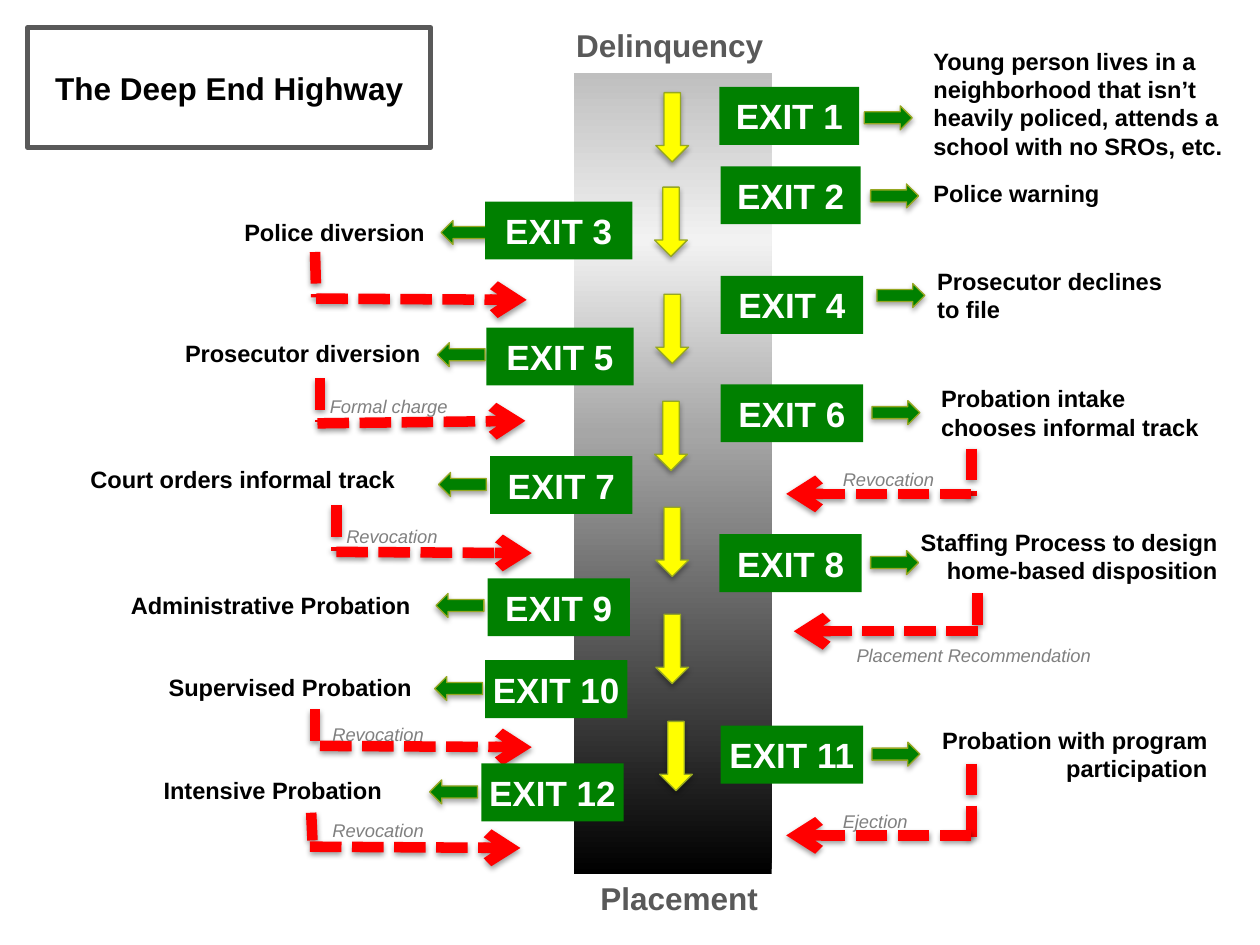
from dataclasses import dataclass
from typing import Optional

from lxml import etree
from pptx import Presentation
from pptx.dml.color import RGBColor
from pptx.enum.dml import MSO_LINE
from pptx.enum.shapes import MSO_CONNECTOR, MSO_SHAPE
from pptx.enum.text import MSO_ANCHOR, MSO_AUTO_SIZE, PP_ALIGN
from pptx.oxml.ns import qn
from pptx.util import Pt

RECT, ARROW = MSO_SHAPE.RECTANGLE, MSO_SHAPE.RIGHT_ARROW
STRAIGHT, DASH = MSO_CONNECTOR.STRAIGHT, MSO_LINE.SQUARE_DOT
LEFT, CENTER, RIGHT = PP_ALIGN.LEFT, PP_ALIGN.CENTER, PP_ALIGN.RIGHT
TOP, MIDDLE = MSO_ANCHOR.TOP, MSO_ANCHOR.MIDDLE
GROW = MSO_AUTO_SIZE.SHAPE_TO_FIT_TEXT

BLACK = RGBColor(0x00, 0x00, 0x00)
WHITE = RGBColor(0xFF, 0xFF, 0xFF)
DARK_GRAY = RGBColor(0x59, 0x59, 0x59)
GRAY = RGBColor(0x80, 0x80, 0x80)
GREEN = RGBColor(0x00, 0x80, 0x00)
OLIVE = RGBColor(0x96, 0xA7, 0x21)
YELLOW = RGBColor(0xFF, 0xFF, 0x00)
RED = RGBColor(0xFF, 0x00, 0x00)
ROAD_STOPS = ((0, "000000"), (55, "A6A6A6"), (79, "F2F2F2"), (100, "BFBFBF"))

PX_PER_INCH = 100
EMU_PER_PX = 914400 // PX_PER_INCH
Box = tuple[int, int, int, int]


@dataclass(frozen=True)
class Exit:
    number: int
    sign: tuple[int, int, int]
    arrow: tuple[int, int]
    outcome: str
    box: Box
    align: PP_ALIGN = LEFT


@dataclass(frozen=True)
class Detour:
    stem: Box
    back: Box
    caption: str = ""
    box: Optional[Box] = None


EXITS = (
    Exit(1, (571, 69, 111), (686, 84), "Young person lives in a neighborhood that isn’t "
         "heavily policed, attends a school with no SROs, etc.", (731, 32, 258, 101)),
    Exit(2, (572, 132, 111), (691, 146), "Police warning", (731, 137, 239, 33)),
    Exit(3, (385, 160, 117), (350, 175), "Police diversion", (184, 168, 239, 33)),
    Exit(4, (572, 219, 113), (696, 225), "Prosecutor declines\nto file", (734, 207, 206, 56)),
    Exit(5, (386, 260, 117), (347, 272), "Prosecutor diversion", (137, 264, 282, 33)),
    Exit(6, (572, 305, 113), (692, 318), "Probation intake chooses informal track",
         (737, 300, 239, 56)),
    Exit(7, (389, 362, 113), (348, 375), "Court orders informal track", (62, 364, 283, 33)),
    Exit(8, (571, 424, 113), (691, 437), "Staffing Process to design home-based disposition",
         (718, 414, 258, 56), RIGHT),
    Exit(9, (387, 459, 113), (346, 471), "Administrative Probation", (94, 464, 325, 33)),
    Exit(10, (385, 524, 113), (345, 537), "Supervised Probation", (124, 529, 295, 33)),
    Exit(11, (572, 576, 113), (692, 589), "Probation with program participation",
         (714, 571, 254, 56), RIGHT),
    Exit(12, (382, 606, 113), (341, 619), "Intensive Probation", (120, 611, 295, 33)),
)

DETOURS = (
    Detour((250, 200, 251, 236), (251, 237, 418, 238)),
    Detour((254, 300, 254, 335), (252, 336, 417, 334), "Formal charge", (252, 309, 117, 28)),
    Detour((771, 356, 771, 394), (771, 392, 624, 392), "Revocation", (659, 367, 151, 28)),
    Detour((267, 401, 267, 437), (267, 438, 422, 439), "Revocation", (265, 412, 151, 28)),
    Detour((776, 471, 776, 503), (776, 501, 630, 501), "Placement Recommendation",
           (670, 506, 237, 28)),
    Detour((250, 563, 250, 592), (254, 592, 422, 593), "Revocation", (254, 569, 151, 28)),
    Detour((771, 606, 771, 665), (771, 663, 624, 663), "Ejection", (659, 638, 151, 28)),
    Detour((247, 645, 248, 667), (246, 672, 413, 673), "Revocation", (254, 645, 145, 28)),
)

LANE_ARROWS = ((506, 88), (505, 163), (506, 248), (505, 333), (506, 417), (506, 502), (509, 587))


def emu(*lengths: int) -> list[int]:
    return [n * EMU_PER_PX for n in lengths]


def write(sp, text: str, *, size: float, color: RGBColor, bold: bool = True,
          italic: bool = False, align: PP_ALIGN = LEFT, anchor: MSO_ANCHOR = TOP,
          wrap: bool = True) -> None:
    tf = sp.text_frame
    tf.word_wrap, tf.vertical_anchor = wrap, anchor
    for i, line in enumerate(text.split("\n")):
        p = tf.add_paragraph() if i else tf.paragraphs[0]
        p.alignment = align
        r = p.add_run()
        r.text = line
        r.font.name, r.font.size = "Arial", Pt(size)
        r.font.bold, r.font.italic = bold, italic
        r.font.color.rgb = color


def add_label(s, text: str, box: Box, **fmt) -> None:
    sp = s.shapes.add_textbox(*emu(*box))
    write(sp, text, **fmt)
    sp.text_frame.auto_size = GROW


def add_shape(s, kind: MSO_SHAPE, box: Box, fill: Optional[RGBColor] = None,
              line: Optional[RGBColor] = None, width: float = 0.75, rotation: int = 0):
    sp = s.shapes.add_shape(kind, *emu(*box))
    sp.shadow.inherit = False
    sp.rotation = rotation
    if fill is None:
        sp.fill.background()
    else:
        sp.fill.solid()
        sp.fill.fore_color.rgb = fill
    if line is None:
        sp.line.fill.background()
    else:
        sp.line.color.rgb = line
        sp.line.width = Pt(width)
    return sp


def add_shadow(effects, distance: float, alpha: int) -> None:
    shadow = etree.SubElement(effects, qn("a:outerShdw"), blurRad=str(Pt(3.1)),
                              dist=str(Pt(distance)), dir="5400000", rotWithShape="0")
    color = etree.SubElement(shadow, qn("a:srgbClr"), val=str(BLACK))
    etree.SubElement(color, qn("a:alpha"), val=str(alpha * 1000))


def add_arrow(s, box: Box, fill: RGBColor, rotation: int) -> None:
    sp = add_shape(s, ARROW, box, fill, OLIVE, rotation=rotation)
    add_shadow(sp._element.spPr.find(qn("a:effectLst")), 1.8, 35)


def add_dashes(s, ends: Box, arrow: bool = False) -> None:
    c = s.shapes.add_connector(STRAIGHT, *emu(*ends))
    c.line.color.rgb = RED
    c.line.width = Pt(6)
    c.line.dash_style = DASH
    spPr = c._element.spPr
    if arrow:
        etree.SubElement(spPr.find(qn("a:ln")), qn("a:tailEnd"), type="arrow")
    add_shadow(etree.SubElement(spPr, qn("a:effectLst")), 1.6, 38)


def add_road(s) -> None:
    sp = add_shape(s, RECT, (216, 297, 636, 157), rotation=270)
    sp.fill.gradient()
    sp.fill.gradient_angle = 0
    stops = sp._element.spPr.find(".//" + qn("a:gsLst"))
    for stop in list(stops):
        stops.remove(stop)
    for percent, color in ROAD_STOPS:
        stop = etree.SubElement(stops, qn("a:gs"), pos=str(percent * 1000))
        etree.SubElement(stop, qn("a:srgbClr"), val=color)


def add_detour(s, d: Detour) -> None:
    add_dashes(s, d.stem)
    add_dashes(s, d.back, arrow=True)
    if d.box:
        add_label(s, d.caption, d.box, size=10.5, color=GRAY, bold=False, italic=True)


def add_exit(s, e: Exit) -> None:
    x, y, w = e.sign
    add_arrow(s, (*e.arrow, 38, 19), GREEN, 180 if e.arrow[0] < x else 0)
    add_label(s, e.outcome, e.box, size=13.5, color=BLACK, align=e.align)
    sign = add_shape(s, RECT, (x, y, w, 46), GREEN)
    write(sign, f"EXIT {e.number}", size=20, color=WHITE, align=CENTER, anchor=MIDDLE, wrap=False)


def main() -> None:
    prs = Presentation()
    prs.slide_width, prs.slide_height = emu(1000, 750)
    s = prs.slides.add_slide(prs.slide_layouts[6])
    add_road(s)
    title = add_shape(s, RECT, (22, 22, 320, 95), line=DARK_GRAY, width=3)
    write(title, "The Deep End Highway", size=18, color=BLACK, align=CENTER, anchor=MIDDLE)
    for text, box in (("Delinquency", (387, 16, 289, 40)), ("Placement", (447, 693, 184, 40))):
        add_label(s, text, box, size=18, color=DARK_GRAY, align=CENTER)
    for x, y in LANE_ARROWS:
        add_arrow(s, (x, y, 55, 26), YELLOW, 90)
    for detour in DETOURS:
        add_detour(s, detour)
    for item in EXITS:
        add_exit(s, item)
    prs.save("out.pptx")


if __name__ == "__main__":
    main()
